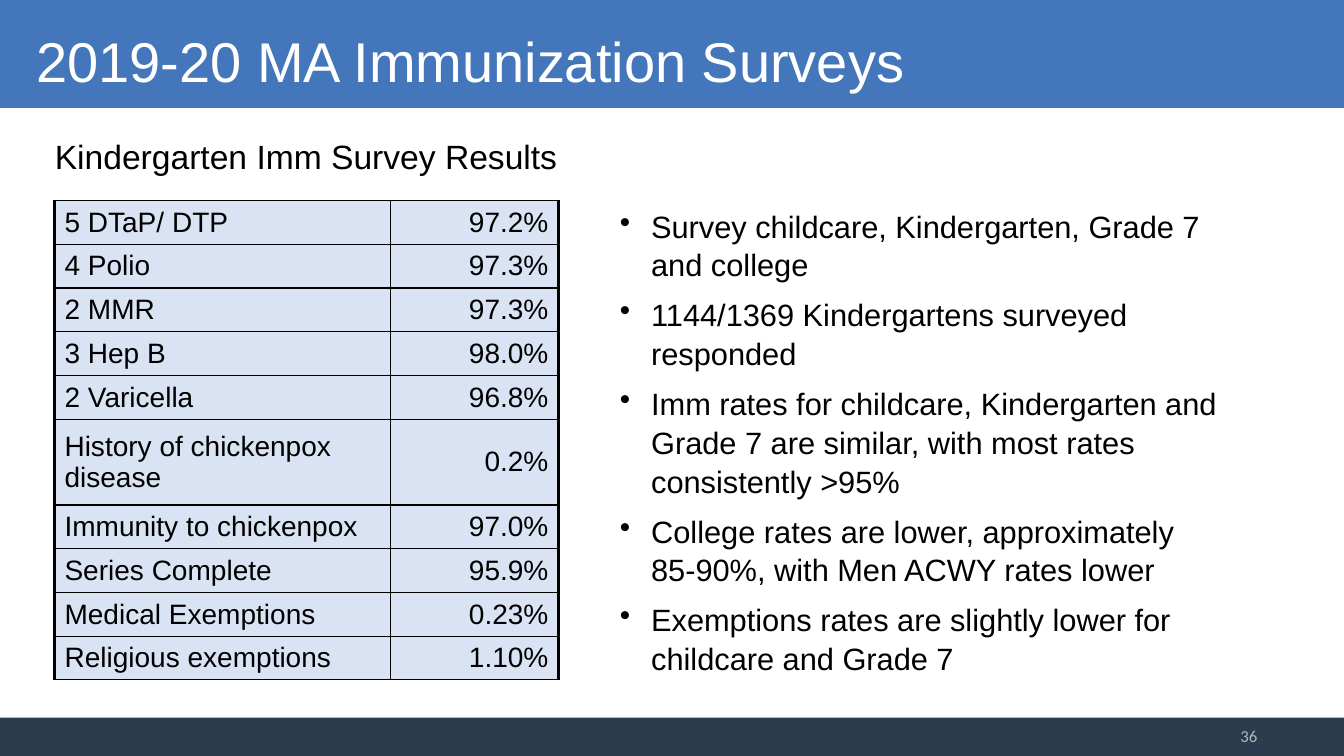
from lxml import etree
from pptx import Presentation
from pptx.dml.color import RGBColor
from pptx.enum.shapes import MSO_SHAPE
from pptx.enum.text import MSO_ANCHOR, PP_ALIGN
from pptx.oxml.ns import qn
from pptx.util import Inches, Pt

COLORS = {
    "header": "4376BB",
    "footer": "2A3C4E",
    "cell": "DAE3F3",
    "text": "000000",
    "title": "FFFFFF",
    "number": "B5B5B5",
}

SURVEY_RESULTS = [
    ("5 DTaP/ DTP", "97.2%"),
    ("4 Polio", "97.3%"),
    ("2 MMR", "97.3%"),
    ("3 Hep B", "98.0%"),
    ("2 Varicella", "96.8%"),
    ("History of chickenpox disease", "0.2%"),
    ("Immunity to chickenpox", "97.0%"),
    ("Series Complete", "95.9%"),
    ("Medical Exemptions", "0.23%"),
    ("Religious exemptions", "1.10%"),
]
TWO_LINE_ROW = 5
TABLE_HEIGHT = 4.75
TWO_LINE_HEIGHT = 0.85
COLUMN_WIDTHS = (3.33, 1.67)

FINDINGS = [
    "Survey childcare, Kindergarten, Grade 7 and college",
    "1144/1369 Kindergartens surveyed responded",
    "Imm rates for childcare, Kindergarten and Grade 7 are similar, "
    "with most rates consistently >95%",
    "College rates are lower, approximately 85-90%, with Men ACWY rates lower",
    "Exemptions rates are slightly lower for childcare and Grade 7",
]


def rgb(name):
    return RGBColor.from_string(COLORS[name])


def format_paragraph(p, size, color="text", align=PP_ALIGN.LEFT, font="Arial"):
    p.alignment = align
    p.font.size = Pt(size)
    p.font.name = font
    p.font.color.rgb = rgb(color)


def add_band(slide, top, height, color):
    sp = slide.shapes.add_shape(
        MSO_SHAPE.RECTANGLE, 0, Inches(top), Inches(13.33), Inches(height))
    sp.shadow.inherit = False
    sp.fill.solid()
    sp.fill.fore_color.rgb = rgb(color)
    sp.line.fill.background()


def set_title(slide, text):
    title = slide.shapes.title
    title.left, title.top = Inches(0.26), Inches(0.21)
    title.width, title.height = Inches(12.19), Inches(0.77)
    tf = title.text_frame
    tf.text = text
    tf.vertical_anchor = MSO_ANCHOR.TOP
    format_paragraph(tf.paragraphs[0], 40, "title")
    # The title belongs in front of the header band.
    slide.shapes._spTree.append(title._element)


def add_text(slide, box, lines, size, anchor=MSO_ANCHOR.TOP, **style):
    sp = slide.shapes.add_textbox(*(Inches(v) for v in box))
    tf = sp.text_frame
    tf.word_wrap = True
    tf.vertical_anchor = anchor
    for i, line in enumerate(lines):
        p = tf.add_paragraph() if i else tf.paragraphs[0]
        p.text = line
        format_paragraph(p, size, **style)
    return tf


def add_bullets(slide, box, lines, size):
    tf = add_text(slide, box, lines, size)
    for p in tf.paragraphs:
        p.space_before = Pt(8)
        p.line_spacing = 1.05
        pPr = p._p.get_or_add_pPr()
        pPr.set("marL", str(Inches(0.31)))
        pPr.set("indent", str(-Inches(0.31)))
        bullet = etree.Element(qn("a:buChar"), char="•")
        pPr.find(qn("a:spcBef")).addnext(bullet)


def set_borders(cell, **widths):
    """Draw cell borders; widths are points keyed by lnL, lnR, lnT, lnB."""
    tcPr = cell._tc.get_or_add_tcPr()
    for i, (side, width) in enumerate(widths.items()):
        ln = etree.Element(qn(f"a:{side}"), w=str(Pt(width)))
        fill = etree.SubElement(ln, qn("a:solidFill"))
        etree.SubElement(fill, qn("a:srgbClr"), val=COLORS["text"])
        tcPr.insert(i, ln)


def add_results_table(slide, left, top, rows):
    table = slide.shapes.add_table(
        len(rows), len(COLUMN_WIDTHS), Inches(left), Inches(top),
        Inches(sum(COLUMN_WIDTHS)), Inches(TABLE_HEIGHT)).table
    table.first_row = False
    table.horz_banding = False
    for col, width in zip(table.columns, COLUMN_WIDTHS):
        col.width = Inches(width)
    row_height = (TABLE_HEIGHT - TWO_LINE_HEIGHT) / (len(rows) - 1)
    for r, values in enumerate(rows):
        table.rows[r].height = Inches(
            TWO_LINE_HEIGHT if r == TWO_LINE_ROW else row_height)
        for c, value in enumerate(values):
            cell = table.cell(r, c)
            cell.text = value
            cell.vertical_anchor = MSO_ANCHOR.MIDDLE
            cell.fill.solid()
            cell.fill.fore_color.rgb = rgb("cell")
            align = PP_ALIGN.RIGHT if c else PP_ALIGN.LEFT
            format_paragraph(cell.text_frame.paragraphs[0], 20, align=align)
            set_borders(cell, lnL=1 if c else 2.25, lnR=2.25 if c else 1,
                        lnT=1, lnB=1)


def main():
    prs = Presentation()
    prs.slide_width, prs.slide_height = Inches(13.33), Inches(7.5)
    slide = prs.slides.add_slide(prs.slide_layouts[5])
    add_band(slide, 0, 1.07, "header")
    add_band(slide, 7.12, 0.38, "footer")
    add_text(slide, (9.58, 7.1, 2.99, 0.4), ["36"], 12, MSO_ANCHOR.MIDDLE,
             color="number", align=PP_ALIGN.RIGHT, font="Calibri")
    set_title(slide, "2019-20 MA Immunization Surveys")
    add_text(slide, (0.26, 1.3, 5.55, 0.5),
             ["Kindergarten Imm Survey Results"], 24, align=PP_ALIGN.CENTER)
    add_results_table(slide, 0.54, 1.99, SURVEY_RESULTS)
    add_bullets(slide, (6.05, 1.99, 6.19, 4.62), FINDINGS, 22)
    prs.save("out.pptx")


if __name__ == "__main__":
    main()
